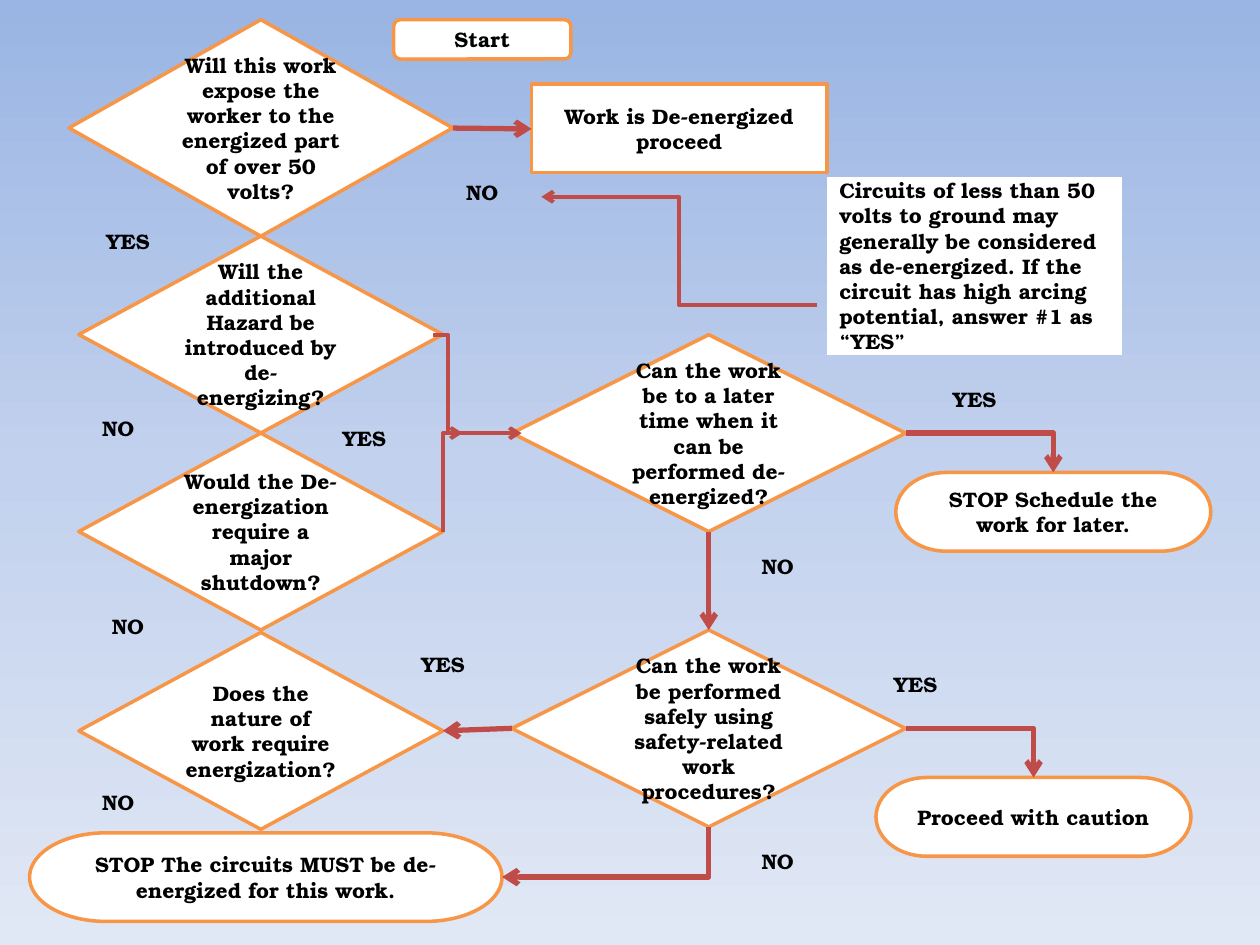
import copy

import pptx
import pptx.dml.color
import pptx.enum.shapes
import pptx.enum.text
import pptx.oxml
import pptx.oxml.ns
import pptx.util

Pt = pptx.util.Pt
RGBColor = pptx.dml.color.RGBColor
Shape = pptx.enum.shapes.MSO_SHAPE
Connector = pptx.enum.shapes.MSO_CONNECTOR
Align = pptx.enum.text.PP_ALIGN

WHITE = RGBColor(0xFF, 0xFF, 0xFF)
BLACK = RGBColor(0x00, 0x00, 0x00)
ORANGE = RGBColor(0xF7, 0x96, 0x46)
RED = RGBColor(0xBF, 0x4C, 0x48)
SKY = [RGBColor(0x9A, 0xB5, 0xE4), RGBColor(0xC2, 0xD1, 0xED), RGBColor(0xE1, 0xE8, 0xF5)]
FONT = {"name": "TeX Gyre Bonum", "size": Pt(12), "bold": True}

# Content: flowchart steps as (text, left, top, width, height)
FIRST_STEPS = [
    (Shape.FLOWCHART_ALTERNATE_PROCESS, "Start", 225, 11.25, 101.25, 22.5),
    (Shape.FLOWCHART_PROCESS, "Work is De-energized proceed", 303.75, 48, 168.75, 50.6),
]
FIRST_QUESTION = ("Will this work expose the worker to the energized part of over 50 volts?",
                  39.4, 11.25, 219.4, 123.75)
# Columns of questions: (left, width, [(text, top)])
QUESTION_HEIGHT = 112.5
QUESTION_COLUMNS = [
    (45, 208.1, [
        ("Will the additional Hazard be introduced by de-energizing?", 134.9),
        ("Would the De-energization require a major shutdown?", 247.5),
        ("Does the nature of work require energization?", 361.4),
    ]),
    (292.5, 225, [
        ("Can the work be to a later time when it can be performed de-energized?", 191.25),
        ("Can the work be performed safely using safety-related work procedures?", 360),
    ]),
]
OUTCOMES = [
    ("STOP Schedule the work for later.", 511.9, 270, 180, 45),
    ("STOP The circuits MUST be de-energized for this work.", 16.9, 475.9, 270, 50.6),
    ("Proceed with caution", 500.6, 444.3, 180, 45),
]
NOTE_AREA = (472.5, 101.4, 168.75, 101.25)
NOTE_LINES = [
    "Circuits of less than 50",
    "volts to ground may",
    "generally be considered",
    "as de-energized. If the",
    "circuit has high arcing",
    "potential, answer #1 as “YES”",
]
ANSWER_SIZE = (45, 28.1)
ANSWERS = {
    "YES": [(50.6, 123.75), (185.6, 236.25), (230.6, 365.6), (534.4, 213.75), (500.6, 376.9)],
    "NO": [(45, 230.6), (50.6, 343.5), (45, 444.3), (421.9, 309.4), (421.9, 478.1),
           (253.1, 95.6)],
}
# Arrows: (route, line width, start x, start y, end x, end y)
ARROWS = [
    ("straight", 3, 405, 303.75, 405, 360),
    ("down first", 3, 405, 472.5, 286.9, 501.2),
    ("across first", 3, 517.5, 416.2, 590.6, 444.3),
    ("across first", 3, 517.5, 247.5, 601.9, 270),
    ("straight", 3, 258.8, 73.2, 303.75, 73.7),
    ("step", 2.25, 247.5, 191.25, 264.4, 247.5),
    ("up first", 2.25, 253.1, 303.75, 298.1, 247.5),
    ("step", 2.25, 466.9, 174.4, 309.4, 112.5),
    ("straight", 3, 292.5, 416.2, 253.1, 417.6),
]
TURNS = {"down first": 90, "up first": 270}


def add_box(page, kind, lines, area, fill=WHITE, outline=ORANGE, align=Align.CENTER):
    box = page.shapes.add_shape(kind, *map(Pt, area))
    box.shadow.inherit = False
    if fill is None:
        box.fill.background()
    else:
        box.fill.solid()
        box.fill.fore_color.rgb = fill
    if outline is None:
        box.line.fill.background()
    else:
        box.line.color.rgb = outline
        box.line.width = Pt(2)
    frame = box.text_frame
    frame.word_wrap = True
    frame.vertical_anchor = pptx.enum.text.MSO_ANCHOR.MIDDLE
    for index, line in enumerate(lines):
        para = frame.add_paragraph() if index else frame.paragraphs[0]
        para.alignment = align
        span = para.add_run()
        span.text = line
        for name, value in FONT.items():
            setattr(span.font, name, value)
        span.font.color.rgb = BLACK


def add_arrow(page, route, width, x1, y1, x2, y2):
    if route in TURNS:
        # A turned connector keeps its centre and swaps width and height
        middle_x, middle_y = (x1 + x2) / 2, (y1 + y2) / 2
        half_width, half_height = abs(y2 - y1) / 2, abs(x2 - x1) / 2
        x1, x2 = middle_x - half_width, middle_x + half_width
        y1, y2 = middle_y - half_height, middle_y + half_height
    kind = Connector.STRAIGHT if route == "straight" else Connector.ELBOW
    arrow = page.shapes.add_connector(kind, *map(Pt, (x1, y1, x2, y2)))
    arrow.line.color.rgb = RED
    arrow.line.width = Pt(width)
    properties = arrow.element.spPr
    if route.endswith("first"):
        properties.find(pptx.oxml.ns.qn("a:prstGeom")).set("prst", "bentConnector2")
    if route in TURNS:
        properties.find(pptx.oxml.ns.qn("a:xfrm")).set("rot", str(TURNS[route] * 60000))
    namespace = pptx.oxml.ns.nsdecls("a")
    head = pptx.oxml.parse_xml(f'<a:tailEnd {namespace} type="arrow"/>')
    properties.find(pptx.oxml.ns.qn("a:ln")).append(head)
    properties.append(pptx.oxml.parse_xml(f"<a:effectLst {namespace}/>"))


def paint_background(page):
    fill = page.background.fill
    fill.gradient()
    fill.gradient_angle = 270
    stop_list = page.element.xpath(".//a:gsLst")[0]
    stop_list.insert(1, copy.deepcopy(stop_list[0]))
    for stop, color, position in zip(fill.gradient_stops, SKY, (0, 0.5, 1)):
        stop.color.rgb = color
        stop.position = position


def main():
    deck = pptx.Presentation()
    deck.slide_width, deck.slide_height = Pt(720), Pt(540)
    page = deck.slides.add_slide(deck.slide_layouts[6])
    paint_background(page)

    # Steps, questions and outcomes
    for kind, text, *area in FIRST_STEPS:
        add_box(page, kind, [text], area)
    questions = [FIRST_QUESTION] + [
        (text, left, top, width, QUESTION_HEIGHT)
        for left, width, column in QUESTION_COLUMNS for text, top in column
    ]
    for kind, group in ((Shape.FLOWCHART_DECISION, questions),
                        (Shape.FLOWCHART_TERMINATOR, OUTCOMES)):
        for text, *area in group:
            add_box(page, kind, [text], area)

    # Note on low voltage
    add_box(page, Shape.FLOWCHART_PROCESS, NOTE_LINES, NOTE_AREA,
            outline=None, align=Align.LEFT)

    # Answers and arrows
    for answer, places in ANSWERS.items():
        for place in places:
            add_box(page, Shape.FLOWCHART_ALTERNATE_PROCESS, [answer],
                    place + ANSWER_SIZE, fill=None, outline=None)
    for arrow in ARROWS:
        add_arrow(page, *arrow)

    deck.save("out.pptx")


if __name__ == "__main__":
    main()
